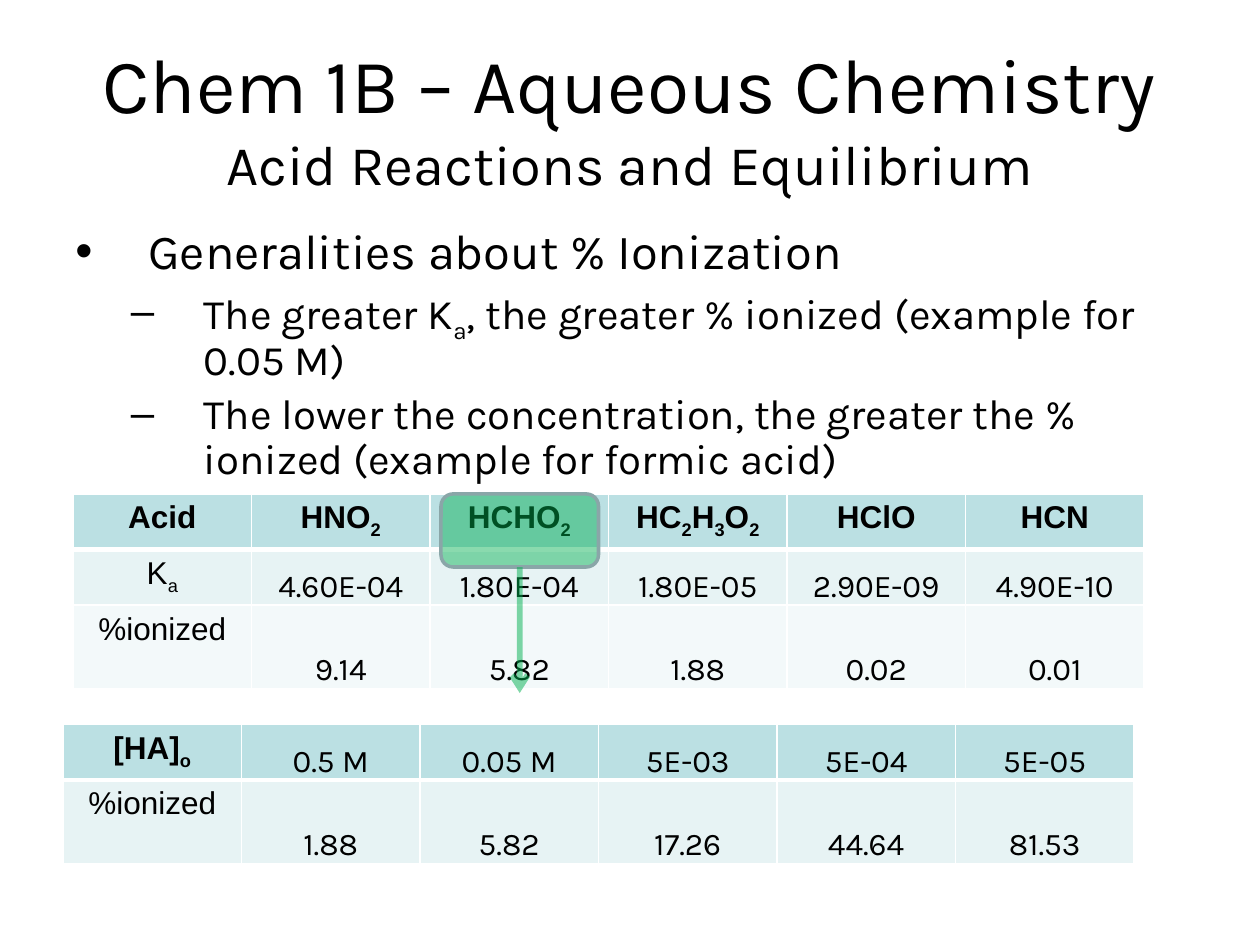
from dataclasses import dataclass

from lxml.etree import SubElement
from pptx import Presentation
from pptx.dml.color import RGBColor
from pptx.enum.shapes import MSO_CONNECTOR, MSO_SHAPE
from pptx.enum.text import MSO_ANCHOR, MSO_AUTO_SIZE, PP_ALIGN
from pptx.oxml import parse_xml
from pptx.oxml.ns import nsdecls, qn
from pptx.util import Inches, Pt

COLORS = {
    "text": "000000",
    "header": "BBE0E3",
    "band1": "E7F3F4",
    "band2": "F3F9FA",
    "border": "FFFFFF",
    "green": "00B050",
    "outline": "8AA6A8",
}
ROW_FILLS = ("header", "band1", "band2")
COLUMN_WIDTH = 8.5 / 6
LABEL_INSETS = (0.1, 0.05, 0.1, 0.05)
VALUE_INSETS = (0.01, 0.01, 0.01, 0)


@dataclass
class Bullet:
    text: str
    level: int
    size: int
    mark: str
    indent: float


@dataclass
class AcidTable:
    left: float
    top: float
    heights: list[float]
    rows: list[list[str]]


BULLETS = [
    Bullet("Generalities about % Ionization", 0, 28, "•", 0.58),
    Bullet("The greater K_a, the greater % ionized (example for 0.05 M)",
           1, 24, "–", 1.02),
    Bullet("The lower the concentration, the greater the % ionized "
           "(example for formic acid)", 1, 24, "–", 1.02),
]
TABLES = [
    AcidTable(0.58, 3.92, [0.4, 0.4, 0.66], [
        ["Acid", "HNO_2", "HCHO_2", "HC_2H_3O_2", "HClO", "HCN"],
        ["K_a", "4.60E-04", "1.80E-04", "1.80E-05", "2.90E-09", "4.90E-10"],
        ["%ionized", "9.14", "5.82", "1.88", "0.02", "0.01"],
    ]),
    AcidTable(0.5, 5.75, [0.4, 0.66], [
        ["[HA]_o", "0.5 M", "0.05 M", "5E-03", "5E-04", "5E-05"],
        ["%ionized", "1.88", "5.82", "17.26", "44.64", "81.53"],
    ]),
]


def rgb(name: str) -> RGBColor:
    return RGBColor.from_string(COLORS[name])


def format_run(r, size: int, font: str = "Karla", bold: bool = False) -> None:
    r.font.size, r.font.name, r.font.bold = Pt(size), font, bold
    r.font.color.rgb = rgb("text")


def add_formula(p, text: str, size: int, font: str = "Karla",
                bold: bool = False) -> None:
    """Add runs to p; the character after each underscore is a subscript."""
    first, *others = text.split("_")
    pieces = [(first, False)]
    for part in others:
        pieces += [(part[0], True), (part[1:], False)]
    for piece, is_subscript in pieces:
        if piece:
            r = p.add_run()
            r.text = piece
            format_run(r, size, font, bold)
            if is_subscript:
                r.font._element.set("baseline", "-25000")


def set_alpha(fill_parent, percent: int) -> None:
    color = next(fill_parent.iter(qn("a:srgbClr")))
    SubElement(color, qn("a:alpha")).set("val", str(percent * 1000))


def add_title(slide) -> None:
    title = slide.shapes.title
    title.left, title.top = Inches(0.5), Inches(0.3)
    title.width, title.height = Inches(9), Inches(1.25)
    tf = title.text_frame
    tf.text = "Chem 1B – Aqueous Chemistry\vAcid Reactions and Equilibrium"
    tf.auto_size = MSO_AUTO_SIZE.NONE
    tf.vertical_anchor = MSO_ANCHOR.MIDDLE
    p = tf.paragraphs[0]
    p.alignment = PP_ALIGN.CENTER
    for r, size in zip(p.runs, (44, 32)):
        format_run(r, size)


def add_bullets(slide, bullets: list[Bullet]) -> None:
    sp = slide.shapes.add_textbox(Inches(0.5), Inches(1.75),
                                  Inches(9), Inches(2.33))
    tf = sp.text_frame
    tf.word_wrap = True
    for i, bullet in enumerate(bullets):
        p = tf.add_paragraph() if i else tf.paragraphs[0]
        p.level = bullet.level
        p.line_spacing = 0.9
        p.space_before = Pt(0.2 * bullet.size)
        add_formula(p, bullet.text, bullet.size)
        p_pr = p._p.get_or_add_pPr()
        p_pr.set("marL", str(Inches(bullet.indent)))
        p_pr.set("indent", str(Inches(-0.58)))
        SubElement(p_pr, qn("a:buFont")).set("typeface", "Arial")
        SubElement(p_pr, qn("a:buChar")).set("char", bullet.mark)


def set_borders(cell, bottom: int) -> None:
    tc_pr = cell._tc.get_or_add_tcPr()
    widths = {"lnL": 1, "lnR": 1, "lnT": 1, "lnB": bottom}
    for i, (side, width) in enumerate(widths.items()):
        tc_pr.insert(i, parse_xml(
            f'<a:{side} {nsdecls("a")} w="{Pt(width)}"><a:solidFill>'
            f'<a:srgbClr val="{COLORS["border"]}"/></a:solidFill></a:{side}>'))


def fill_cell(cell, text: str, row: int) -> None:
    is_label = not text[0].isdigit()
    insets = LABEL_INSETS if is_label else VALUE_INSETS
    (cell.margin_left, cell.margin_top,
     cell.margin_right, cell.margin_bottom) = map(Inches, insets)
    cell.vertical_anchor = MSO_ANCHOR.TOP if is_label else MSO_ANCHOR.BOTTOM
    cell.fill.solid()
    cell.fill.fore_color.rgb = rgb(ROW_FILLS[row])
    set_borders(cell, bottom=1 if row else 3)
    p = cell.text_frame.paragraphs[0]
    p.alignment = PP_ALIGN.CENTER
    add_formula(p, text, 18, "Arial" if is_label else "Karla",
                bold=is_label and row == 0)


def add_acid_table(slide, spec_: AcidTable) -> None:
    columns = len(spec_.rows[0])
    table = slide.shapes.add_table(
        len(spec_.rows), columns, Inches(spec_.left), Inches(spec_.top),
        Inches(columns * COLUMN_WIDTH), Inches(sum(spec_.heights))).table
    for column in table.columns:
        column.width = Inches(COLUMN_WIDTH)
    for i, (height, texts) in enumerate(zip(spec_.heights, spec_.rows)):
        table.rows[i].height = Inches(height)
        for j, text in enumerate(texts):
            fill_cell(table.cell(i, j), text, i)


def add_highlight(slide) -> None:
    """Mark formic acid and point from it to the second table."""
    box = slide.shapes.add_shape(MSO_SHAPE.ROUNDED_RECTANGLE, Inches(3.5),
                                 Inches(3.92), Inches(1.25), Inches(0.58))
    box.shadow.inherit = False
    box.fill.solid()
    box.fill.fore_color.rgb = rgb("green")
    set_alpha(box._element.spPr, 46)
    box.line.color.rgb = rgb("outline")
    box.line.width = Pt(2)

    x = box.left + box.width // 2
    arrow = slide.shapes.add_connector(MSO_CONNECTOR.STRAIGHT, x, Inches(4.5),
                                       x, Inches(5.5))
    arrow.begin_connect(box, 2)
    arrow.line.color.rgb = rgb("green")
    arrow.line.width = Pt(3.25)
    ln = arrow.line._get_or_add_ln()
    set_alpha(ln, 50)
    SubElement(ln, qn("a:tailEnd")).set("type", "arrow")
    SubElement(arrow._element.spPr, qn("a:effectLst"))


def main() -> None:
    prs = Presentation()
    prs.slide_width, prs.slide_height = Inches(10), Inches(7.5)
    slide = prs.slides.add_slide(prs.slide_layouts.get_by_name("Title Only"))
    add_title(slide)
    add_bullets(slide, BULLETS)
    for acid_table in TABLES:
        add_acid_table(slide, acid_table)
    add_highlight(slide)
    prs.save("out.pptx")


if __name__ == "__main__":
    main()
